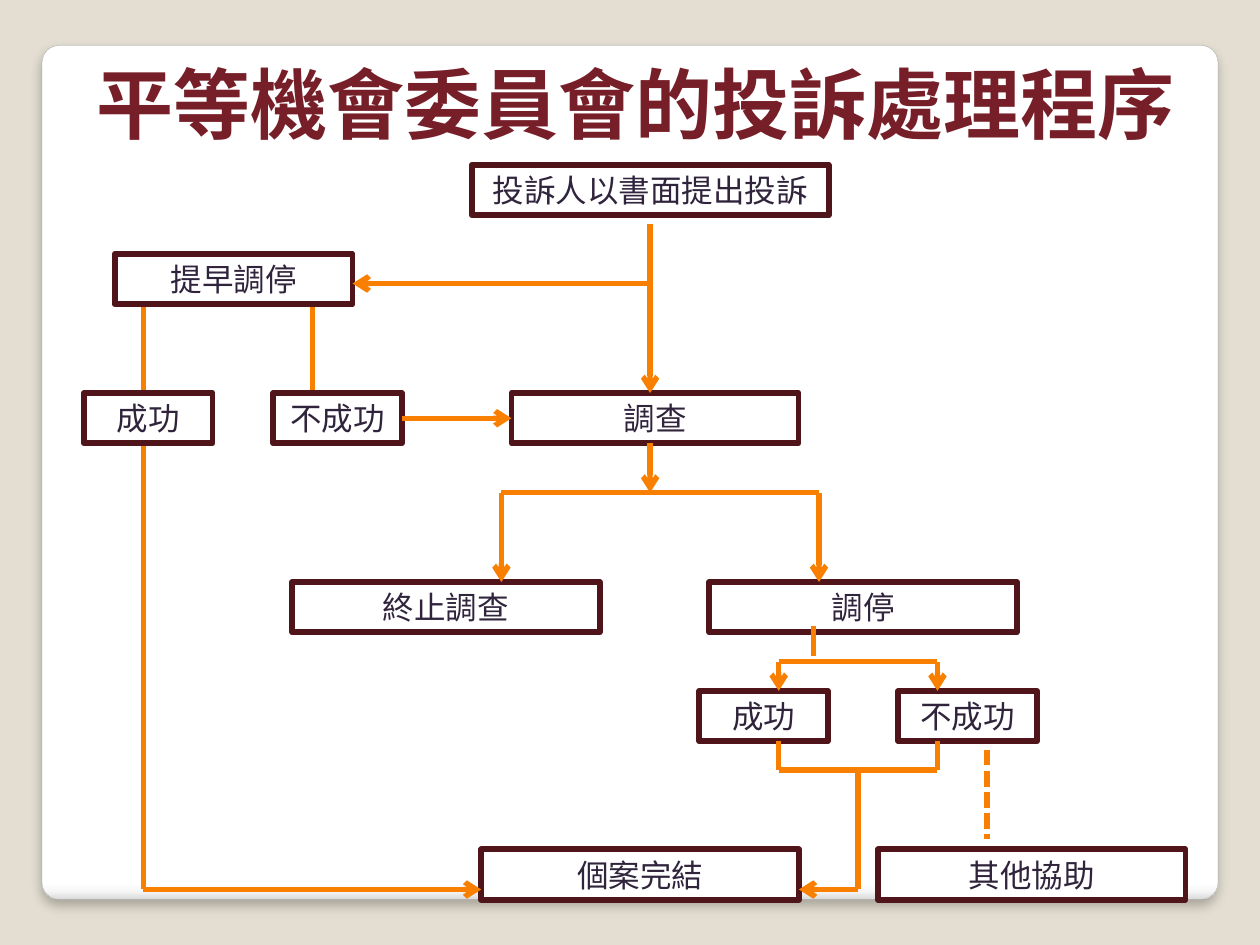
import pptx
import pptx.dml.color
import pptx.enum.dml
import pptx.enum.shapes
import pptx.enum.text
import pptx.oxml
import pptx.oxml.ns
import pptx.util
from dataclasses import dataclass

Pt = pptx.util.Pt


@dataclass(frozen=True)
class Theme:
    background: str = "E3DED1"
    panel_edge: str = "A4A4A4"
    title: str = "771F28"
    text: str = "30243C"
    box_fill: str = "FFFFFF"
    box_line: str = "50141B"
    flow: str = "F97F00"
    title_font: str = "Noto Sans CJK SC"
    body_font: str = "DejaVu Sans"
    title_size: float = 44
    body_size: float = 18
    box_line_width: float = 3.35
    flow_width: float = 3


THEME = Theme()
TITLE = "平等機會委員會的投訴處理程序"
TITLE_PLACE = (48, 26, 635, 62.5)
PANEL_PLACE = (24, 26, 672, 488)
PANEL_STOPS = [(0, "FFFFFF"), (98, "FFFFFF"), (99, "F7F7F7"), (100, "DADADA")]
BOX_HEIGHT = 28.8

ROWS = [
    (94.3, [("complaint", "投訴人以書面提出投訴", 269.5, 204)]),
    (145.2, [("early", "提早調停", 65.5, 136)]),
    (224.6, [("early success", "成功", 48, 73.5),
             ("early failure", "不成功", 156.2, 73.5),
             ("investigation", "調查", 292.3, 164)]),
    (332.6, [("discontinued", "終止調查", 167, 175.7),
             ("conciliation", "調停", 405.4, 175.7)]),
    (394.8, [("success", "成功", 399.6, 73.5),
             ("failure", "不成功", 513.4, 79.2)]),
    (485.4, [("closed", "個案完結", 275, 181.5),
             ("assistance", "其他協助", 501.8, 175.7)]),
]

SUCCESS_X, FAILURE_X, MAIN_X = 82, 178.6, 371.5
END_X, MEDIATE_X, SPLIT_Y = 286.5, 468, 281.5
WON_X, LOST_X, FORK_Y, MERGE_Y = 445, 535.7, 378, 440
MERGE_X = (WON_X + LOST_X) / 2
CLOSE_Y = 508.3

LINES_BEHIND = [
    (FAILURE_X, 173.5, FAILURE_X, 230.4, ""),
    (SUCCESS_X, 173.5, SUCCESS_X, CLOSE_Y, ""),
]
LINES_FRONT = [
    (MAIN_X, 128, MAIN_X, 224.6, "arrow"),
    (MAIN_X, 162, 201.5, 162, "arrow"),
    (SUCCESS_X, CLOSE_Y, 275, CLOSE_Y, "arrow"),
    (MAIN_X, 253, MAIN_X, SPLIT_Y, "arrow"),
    (END_X, SPLIT_Y, MEDIATE_X, SPLIT_Y, ""),
    (END_X, SPLIT_Y, END_X, 332.6, "arrow"),
    (MEDIATE_X, SPLIT_Y, MEDIATE_X, 332.6, "arrow"),
    (465, 357.8, 465, 375, ""),
    (WON_X, FORK_Y, LOST_X, FORK_Y, ""),
    (WON_X, FORK_Y, WON_X, 394.8, "arrow"),
    (LOST_X, FORK_Y, LOST_X, 394.8, "arrow"),
    (WON_X, 423.4, WON_X, MERGE_Y, ""),
    (LOST_X, 423.4, LOST_X, MERGE_Y, ""),
    (WON_X, MERGE_Y, LOST_X, MERGE_Y, ""),
    (MERGE_X, MERGE_Y, MERGE_X, CLOSE_Y, ""),
    (MERGE_X, CLOSE_Y, 456.5, CLOSE_Y, "arrow"),
    (564, 428.4, 564, 479.5, "dash"),
]


def color(value):
    return pptx.dml.color.RGBColor.from_string(value)


def element(xml):
    namespace = pptx.oxml.ns.nsdecls("a")
    return pptx.oxml.parse_xml(xml.replace(">", f" {namespace}>", 1)
                               if "/>" not in xml.split(">", 1)[0] + ">"
                               else xml.replace("/>", f" {namespace}/>", 1))


def style_paragraph(paragraph, font_name, size, value, bold=False):
    font = paragraph.font
    font.name, font.size, font.bold = font_name, Pt(size), bold
    font.color.rgb = color(value)
    latin = paragraph._p.pPr.find(".//" + pptx.oxml.ns.qn("a:latin"))
    latin.addnext(element(f'<a:ea typeface="{font_name}"/>'))


def add_panel(slide):
    panel = slide.shapes.add_shape(
        pptx.enum.shapes.MSO_SHAPE.ROUNDED_RECTANGLE, *map(Pt, PANEL_PLACE))
    panel.adjustments[0] = 0.02
    panel.line.color.rgb = color(THEME.panel_edge)
    panel.line.width = Pt(0.16)
    panel.fill.gradient()
    panel.fill.gradient_angle = 270
    stops = panel._element.spPr.find(".//" + pptx.oxml.ns.qn("a:gsLst"))
    for stop in list(stops):
        stops.remove(stop)
    for position, value in PANEL_STOPS:
        stops.append(element(f'<a:gs pos="{position * 1000}">'
                             f'<a:srgbClr val="{value}"/></a:gs>'))
    panel._element.spPr.append(element(
        '<a:effectLst><a:outerShdw blurRad="76200" dist="50800" dir="5400000">'
        '<a:srgbClr val="000000"><a:alpha val="25000"/></a:srgbClr>'
        '</a:outerShdw></a:effectLst>'))
    slide.shapes._spTree.insert(2, panel._element)


def add_title(slide):
    title = slide.shapes.title
    title.left, title.top, title.width, title.height = map(Pt, TITLE_PLACE)
    frame = title.text_frame
    frame.text = TITLE
    frame.word_wrap = True
    frame.vertical_anchor = pptx.enum.text.MSO_ANCHOR.BOTTOM
    paragraph = frame.paragraphs[0]
    paragraph.alignment = pptx.enum.text.PP_ALIGN.LEFT
    style_paragraph(paragraph, THEME.title_font, THEME.title_size, THEME.title, True)


def add_box(slide, label, left, top, width):
    box = slide.shapes.add_shape(pptx.enum.shapes.MSO_SHAPE.RECTANGLE,
                                 *map(Pt, (left, top, width, BOX_HEIGHT)))
    box.shadow.inherit = False
    box.fill.solid()
    box.fill.fore_color.rgb = color(THEME.box_fill)
    box.line.color.rgb = color(THEME.box_line)
    box.line.width = Pt(THEME.box_line_width)
    box.line._ln.append(element("<a:round/>"))
    frame = box.text_frame
    frame.text = label
    frame.word_wrap = True
    frame.auto_size = pptx.enum.text.MSO_AUTO_SIZE.SHAPE_TO_FIT_TEXT
    frame.vertical_anchor = pptx.enum.text.MSO_ANCHOR.TOP
    paragraph = frame.paragraphs[0]
    paragraph.alignment = pptx.enum.text.PP_ALIGN.CENTER
    style_paragraph(paragraph, THEME.body_font, THEME.body_size, THEME.text)
    return box


def add_flow(slide, begin_x, begin_y, end_x, end_y, kind):
    flow = slide.shapes.add_connector(pptx.enum.shapes.MSO_CONNECTOR.STRAIGHT,
                                      *map(Pt, (begin_x, begin_y, end_x, end_y)))
    flow.line.color.rgb = color(THEME.flow)
    flow.line.width = Pt(THEME.flow_width)
    if kind == "dash":
        flow.line.dash_style = pptx.enum.dml.MSO_LINE.SQUARE_DOT
        flow.line._ln.find(pptx.oxml.ns.qn("a:prstDash")).set("val", "sysDash")
    if kind == "arrow":
        flow.line._ln.append(element('<a:tailEnd type="arrow"/>'))
    flow._element.spPr.append(element("<a:effectLst/>"))
    return flow


def main():
    presentation = pptx.Presentation()
    presentation.slide_width, presentation.slide_height = Pt(720), Pt(540)
    slide = presentation.slides.add_slide(presentation.slide_layouts[5])
    slide.background.fill.solid()
    slide.background.fill.fore_color.rgb = color(THEME.background)
    add_panel(slide)
    add_title(slide)
    for line in LINES_BEHIND:
        add_flow(slide, *line)
    boxes = {}
    for top, row in ROWS:
        for name, label, left, width in row:
            boxes[name] = add_box(slide, label, left, top, width)
    for line in LINES_FRONT:
        add_flow(slide, *line)
    retry = add_flow(slide, 229.7, 239, 292.3, 239, "arrow")
    retry.begin_connect(boxes["early failure"], 3)
    retry.end_connect(boxes["investigation"], 1)
    presentation.save("out.pptx")


if __name__ == "__main__":
    main()
